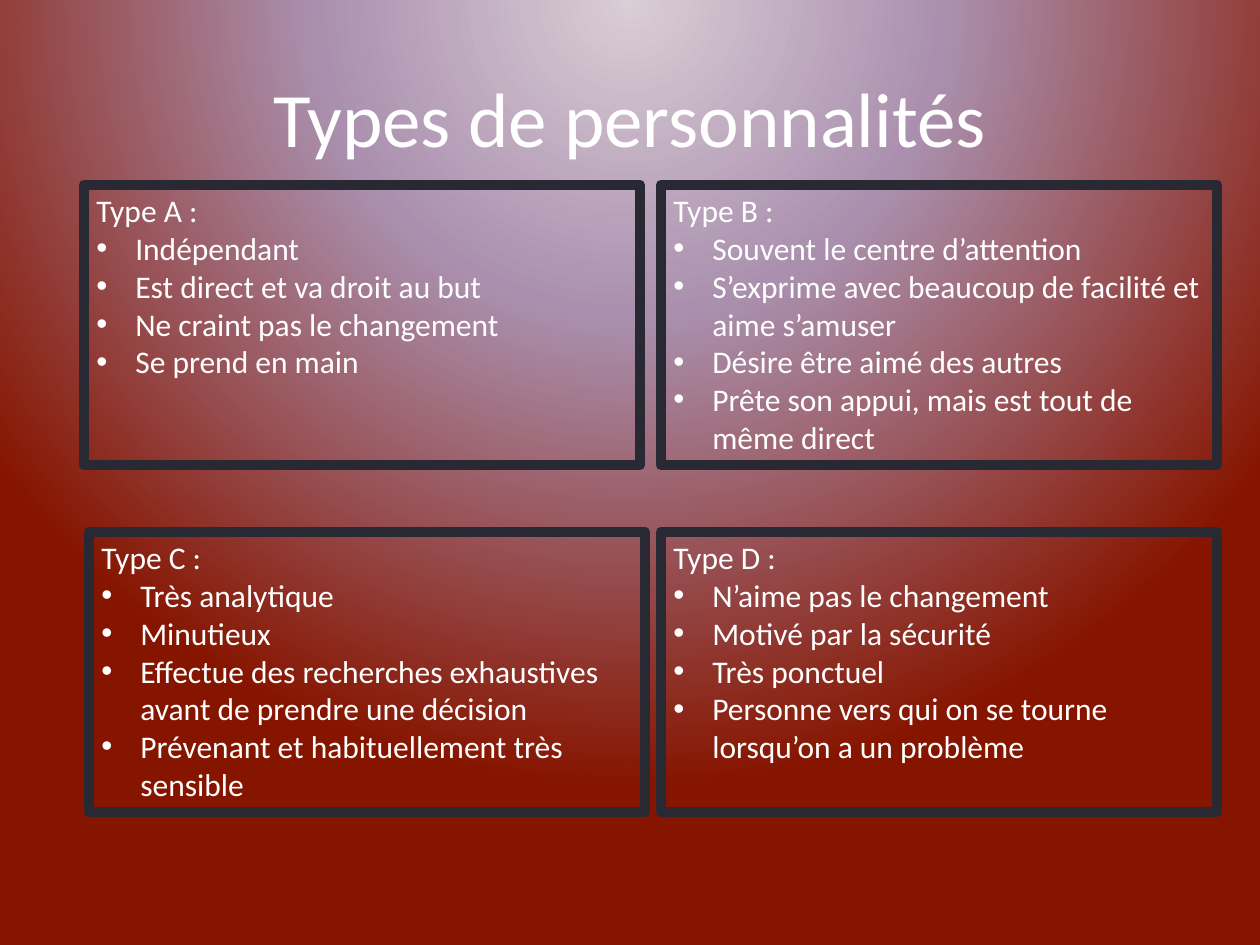
import lxml.etree
import pptx
import pptx.dml.color
import pptx.enum.shapes
import pptx.enum.text
import pptx.oxml
import pptx.oxml.ns
import pptx.util

PX = 914400 / 126
FONT = "Calibri"
COLORS = {"text": "FFFFFF", "border": "292934"}
GRADIENT = [(0, "D9CDD6"), (40, "AA90AE"), (100, "861500")]
TITLE = "Types de personnalités"
TITLE_BOX = (63, 38, 1134, 157)
BOX_WIDTH, BOX_HEIGHT = 556, 280
INDENT = 39

TYPES = [
    ("Type A :", (84, 185), [
        "Indépendant",
        "Est direct et va droit au but",
        "Ne craint pas le changement",
        "Se prend en main",
    ]),
    ("Type B :", (661, 185), [
        "Souvent le centre d’attention",
        "S’exprime avec beaucoup de facilité et aime s’amuser",
        "Désire être aimé des autres",
        "Prête son appui, mais est tout de même direct",
    ]),
    ("Type C :", (89, 532), [
        "Très analytique",
        "Minutieux",
        "Effectue des recherches exhaustives avant de prendre une décision",
        "Prévenant et habituellement très sensible",
    ]),
    ("Type D :", (661, 532), [
        "N’aime pas le changement",
        "Motivé par la sécurité",
        "Très ponctuel",
        "Personne vers qui on se tourne lorsqu’on a un problème",
    ]),
]


def emu(pixels):
    return pptx.util.Emu(round(pixels * PX))


def color(name):
    return pptx.dml.color.RGBColor.from_string(COLORS[name])


def qualified(tag):
    return pptx.oxml.ns.qn(tag)


def paint_background(slide):
    slide.background.fill.solid()
    properties = slide.element.xpath(".//p:bgPr")[0]
    stops = "".join(
        f'<a:gs pos="{position * 1000}"><a:srgbClr val="{value}"/></a:gs>'
        for position, value in GRADIENT
    )
    gradient = pptx.oxml.parse_xml(
        f'<a:gradFill {pptx.oxml.ns.nsdecls("a")} rotWithShape="1"><a:gsLst>{stops}</a:gsLst>'
        '<a:path path="circle">'
        '<a:fillToRect l="50000" t="-80000" r="50000" b="180000"/>'
        '</a:path></a:gradFill>'
    )
    properties.replace(properties[0], gradient)


def add_text(paragraph, text, size, alignment):
    paragraph.alignment = alignment
    run = paragraph.add_run()
    run.text = text
    run.font.name = FONT
    run.font.size = pptx.util.Pt(size)
    run.font.color.rgb = color("text")


def add_bullet(paragraph):
    properties = paragraph._p.get_or_add_pPr()
    properties.set("marL", str(emu(INDENT)))
    properties.set("indent", str(-emu(INDENT)))
    lxml.etree.SubElement(properties, qualified("a:buFont")).set("typeface", "Arial")
    lxml.etree.SubElement(properties, qualified("a:buChar")).set("char", "•")


def add_title(slide):
    box = slide.shapes.add_textbox(*map(emu, TITLE_BOX))
    frame = box.text_frame
    frame.word_wrap = True
    frame.vertical_anchor = pptx.enum.text.MSO_ANCHOR.MIDDLE
    add_text(frame.paragraphs[0], TITLE, 44, pptx.enum.text.PP_ALIGN.CENTER)


def add_type(slide, heading, position, traits):
    shape = slide.shapes.add_shape(
        pptx.enum.shapes.MSO_SHAPE.RECTANGLE,
        *map(emu, (*position, BOX_WIDTH, BOX_HEIGHT)),
    )
    shape.shadow.inherit = False
    shape.fill.background()
    shape.line.color.rgb = color("border")
    shape.line.width = pptx.util.Pt(6)
    line = shape.element.spPr.find(qualified("a:ln"))
    lxml.etree.SubElement(line, qualified("a:round"))
    frame = shape.text_frame
    frame.word_wrap = True
    frame.auto_size = pptx.enum.text.MSO_AUTO_SIZE.SHAPE_TO_FIT_TEXT
    frame.vertical_anchor = pptx.enum.text.MSO_ANCHOR.TOP
    left = pptx.enum.text.PP_ALIGN.LEFT
    add_text(frame.paragraphs[0], heading, 18, left)
    for trait in traits:
        paragraph = frame.add_paragraph()
        add_text(paragraph, trait, 18, left)
        add_bullet(paragraph)


def main():
    presentation = pptx.Presentation()
    presentation.slide_width = emu(1260)
    presentation.slide_height = emu(945)
    slide = presentation.slides.add_slide(presentation.slide_layouts[6])
    paint_background(slide)
    add_title(slide)
    for heading, position, traits in TYPES:
        add_type(slide, heading, position, traits)
    presentation.save("out.pptx")


if __name__ == "__main__":
    main()
